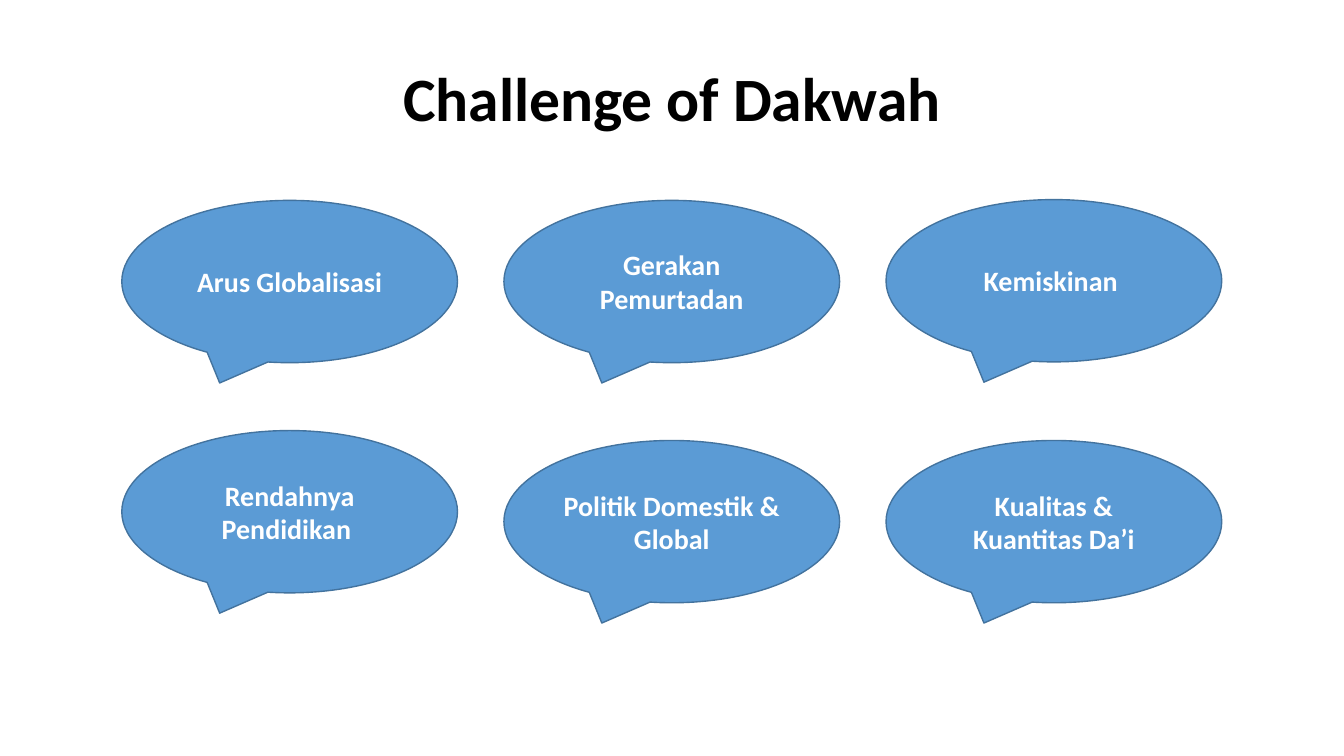
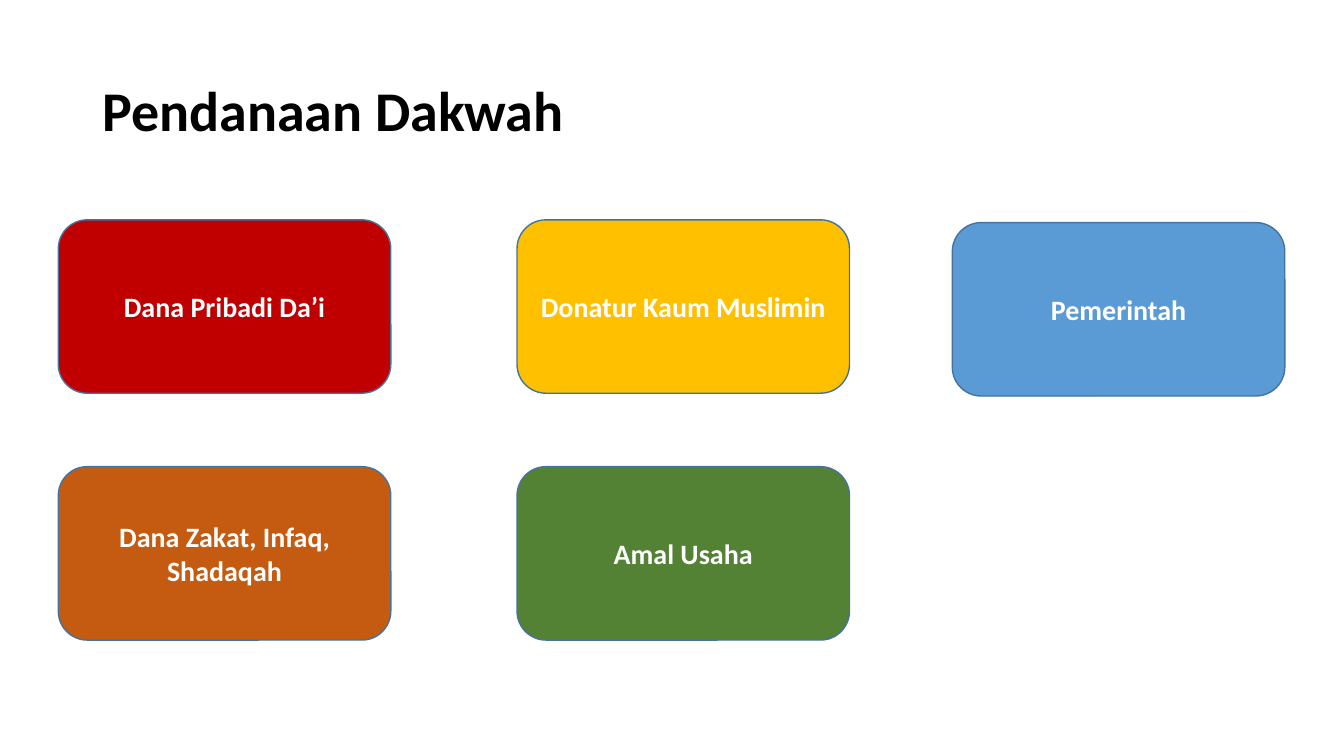
import pptx
import pptx.util
import pptx.dml.color
import pptx.enum.shapes
import pptx.enum.text

Cm, Pt = pptx.util.Cm, pptx.util.Pt
SHAPE = pptx.enum.shapes.MSO_SHAPE
ALIGN = pptx.enum.text.PP_ALIGN

BLUE, RED, GOLD = "5B9BD5", "C00000", "FFC000"
ORANGE, GREEN = "C55A11", "548235"
OUTLINE, WHITE, BLACK = "43739E", "FFFFFF", "000000"


def rgb(code):
    return pptx.dml.color.RGBColor.from_string(code)


class Deck:
    """Shared style and the current slide."""
    font = "Calibri"
    label_size = 20

    def __init__(self):
        self.prs = pptx.Presentation()
        self.prs.slide_width, self.prs.slide_height = Cm(33.87), Cm(19.05)
        self.s = None

    def new_slide(self):
        self.s = self.prs.slides.add_slide(self.prs.slide_layouts[6])

    def set_text(self, sp, text, size, color, align):
        tf = sp.text_frame
        tf.word_wrap = True
        tf.vertical_anchor = pptx.enum.text.MSO_ANCHOR.MIDDLE
        p = tf.paragraphs[0]
        p.text = text
        p.alignment = align
        p.font.name, p.font.size, p.font.bold = self.font, Pt(size), True
        p.font.color.rgb = rgb(color)
        return p

    def title(self, text, size, height, align):
        sp = self.s.shapes.add_textbox(Cm(2.34), Cm(1.02), Cm(29.21), Cm(height))
        p = self.set_text(sp, text, size, BLACK, align)
        p.line_spacing = 0.9

    def label(self, kind, text, x, y, w, h, fill):
        sp = self.s.shapes.add_shape(kind, Cm(x), Cm(y), Cm(w), Cm(h))
        sp.shadow.inherit = False
        sp.fill.solid()
        sp.fill.fore_color.rgb = rgb(fill)
        sp.line.color.rgb = rgb(OUTLINE)
        sp.line.width = Pt(1)
        self.set_text(sp, text, self.label_size, WHITE, ALIGN.CENTER)


def challenges(deck):
    deck.new_slide()
    deck.title("Challenge of Dakwah", 44, 3.1, ALIGN.CENTER)

    # Speech bubbles: three equal columns, each with its own height on the page
    bubbles = [
        ("Arus Globalisasi", 5.05),
        ("Gerakan Pemurtadan", 5.05),
        ("Kemiskinan ", 5.03),
        ("Rendahnya Pendidikan ", 10.85),
        ("Politik Domestik & Global", 11.1),
        ("Kualitas & Kuantitas Da’i", 11.1),
    ]
    for i, (text, y) in enumerate(bubbles):
        x = 3.07 + i % 3 * 9.63
        deck.label(SHAPE.OVAL_CALLOUT, text, x, y, 8.46, 4.09, BLUE)


def funding(deck):
    deck.new_slide()
    deck.title("Pendanaan Dakwah", 40, 3.68, ALIGN.LEFT)

    # Funding sources
    columns = (1.47, 13.03, 24)
    sources = [
        ("Dana Pribadi Da’i", 5.54, RED),
        ("Donatur Kaum Muslimin", 5.54, GOLD),
        ("Pemerintah", 5.61, BLUE),
        ("Dana Zakat, Infaq, Shadaqah", 11.76, ORANGE),
        ("Amal Usaha", 11.76, GREEN),
    ]
    for i, (text, y, fill) in enumerate(sources):
        deck.label(SHAPE.ROUNDED_RECTANGLE, text, columns[i % 3], y, 8.38, 4.37, fill)


def main():
    deck = Deck()
    challenges(deck)
    funding(deck)
    deck.prs.save("out.pptx")


if __name__ == "__main__":
    main()
